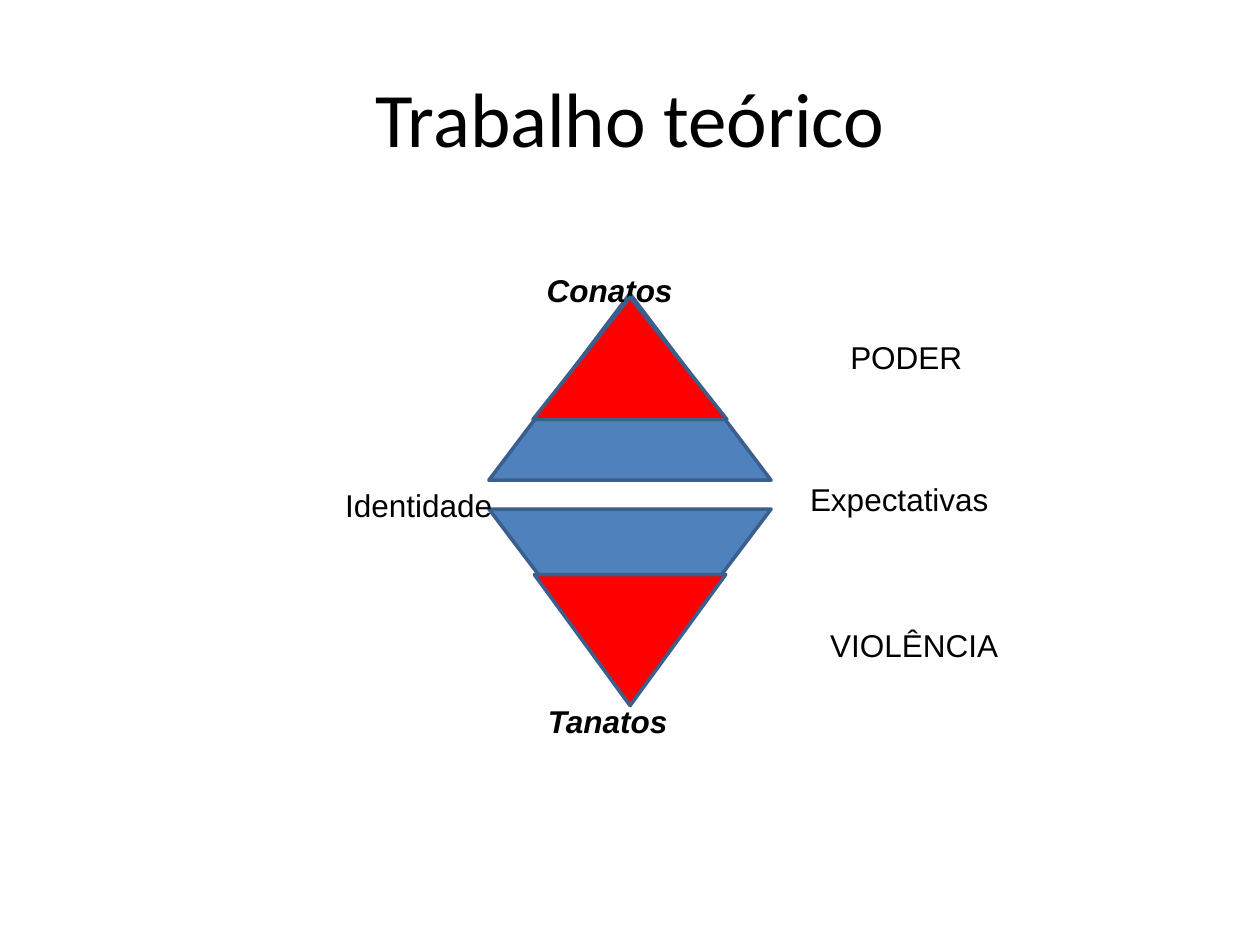
"""Build the "Trabalho teórico" slide: two facing triangles with their concepts."""
from dataclasses import dataclass

import pptx
import pptx.dml.color
import pptx.enum.shapes
import pptx.enum.text
import pptx.util
from pptx.dml.color import RGBColor
from pptx.slide import Slide
from pptx.util import Pt


@dataclass(frozen=True)
class Theme:
    title_font: str = "Calibri"
    label_font: str = "Arial"
    title_size: int = 44
    label_size: int = 18
    ink: RGBColor = RGBColor(0, 0, 0)
    base: RGBColor = RGBColor(0x4F, 0x81, 0xBD)
    tip: RGBColor = RGBColor(0xFF, 0, 0)
    outline: RGBColor = RGBColor(0x3A, 0x5F, 0x8C)
    outline_width: int = 2


@dataclass(frozen=True)
class Triangle:
    top: float
    width: float
    height: float
    color: RGBColor
    inverted: bool = False


@dataclass(frozen=True)
class Label:
    text: str
    left: float
    top: float
    width: float
    emphasis: bool = False


THEME = Theme()
AXIS = 360
LABEL_HEIGHT = 29

BASES = [
    Triangle(167.8, 161.3, 106.6, THEME.base),
    Triangle(290.9, 161.3, 106.6, THEME.base, inverted=True),
]
TIPS = [
    Triangle(169.9, 110.9, 69.8, THEME.tip),
    Triangle(328.3, 109.4, 74.9, THEME.tip, inverted=True),
]
LABELS = [
    Label("Conatos", 305.3, 151.2, 87.1, emphasis=True),
    Label("Tanatos", 306, 397.4, 88.6, emphasis=True),
    Label("Identidade", 190.1, 274.3, 99.4),
    Label("PODER", 478.8, 189.4, 79.2),
    Label("VIOLÊNCIA", 467.3, 354.2, 111.6),
    Label("Expectativas", 455.8, 270.7, 117.4),
]


def set_title(slide: Slide, text: str) -> None:
    """Place and format the title placeholder."""
    title = slide.shapes.title
    title.left, title.top, title.width, title.height = Pt(36), Pt(21.6), Pt(648), Pt(90)
    title.text_frame.text = text
    title.text_frame.vertical_anchor = pptx.enum.text.MSO_ANCHOR.MIDDLE
    heading = title.text_frame.paragraphs[0]
    heading.alignment = pptx.enum.text.PP_ALIGN.CENTER
    heading.font.name = THEME.title_font
    heading.font.size = Pt(THEME.title_size)
    heading.font.color.rgb = THEME.ink


def draw_triangle(slide: Slide, triangle: Triangle) -> None:
    """Draw a triangle centred on the vertical axis."""
    shape = slide.shapes.add_shape(
        pptx.enum.shapes.MSO_SHAPE.ISOSCELES_TRIANGLE,
        Pt(AXIS - triangle.width / 2), Pt(triangle.top),
        Pt(triangle.width), Pt(triangle.height),
    )
    shape.rotation = 180 if triangle.inverted else 0
    shape.shadow.inherit = False
    shape.fill.solid()
    shape.fill.fore_color.rgb = triangle.color
    shape.line.color.rgb = THEME.outline
    shape.line.width = Pt(THEME.outline_width)


def draw_label(slide: Slide, label: Label) -> None:
    """Write one concept on a single line."""
    box = slide.shapes.add_textbox(
        Pt(label.left), Pt(label.top), Pt(label.width), Pt(LABEL_HEIGHT)
    )
    frame = box.text_frame
    frame.word_wrap = False
    frame.auto_size = pptx.enum.text.MSO_AUTO_SIZE.SHAPE_TO_FIT_TEXT
    frame.text = label.text
    font = frame.paragraphs[0].font
    font.name = THEME.label_font
    font.size = Pt(THEME.label_size)
    font.color.rgb = THEME.ink
    font.bold = font.italic = label.emphasis


def main() -> None:
    """Assemble and save the presentation."""
    presentation = pptx.Presentation()
    presentation.slide_width, presentation.slide_height = Pt(720), Pt(540)
    slide = presentation.slides.add_slide(presentation.slide_layouts[5])
    set_title(slide, "Trabalho teórico")
    for base in BASES:
        draw_triangle(slide, base)
    for label in LABELS:
        draw_label(slide, label)
    for tip in TIPS:
        draw_triangle(slide, tip)
    presentation.save("out.pptx")


if __name__ == "__main__":
    main()
